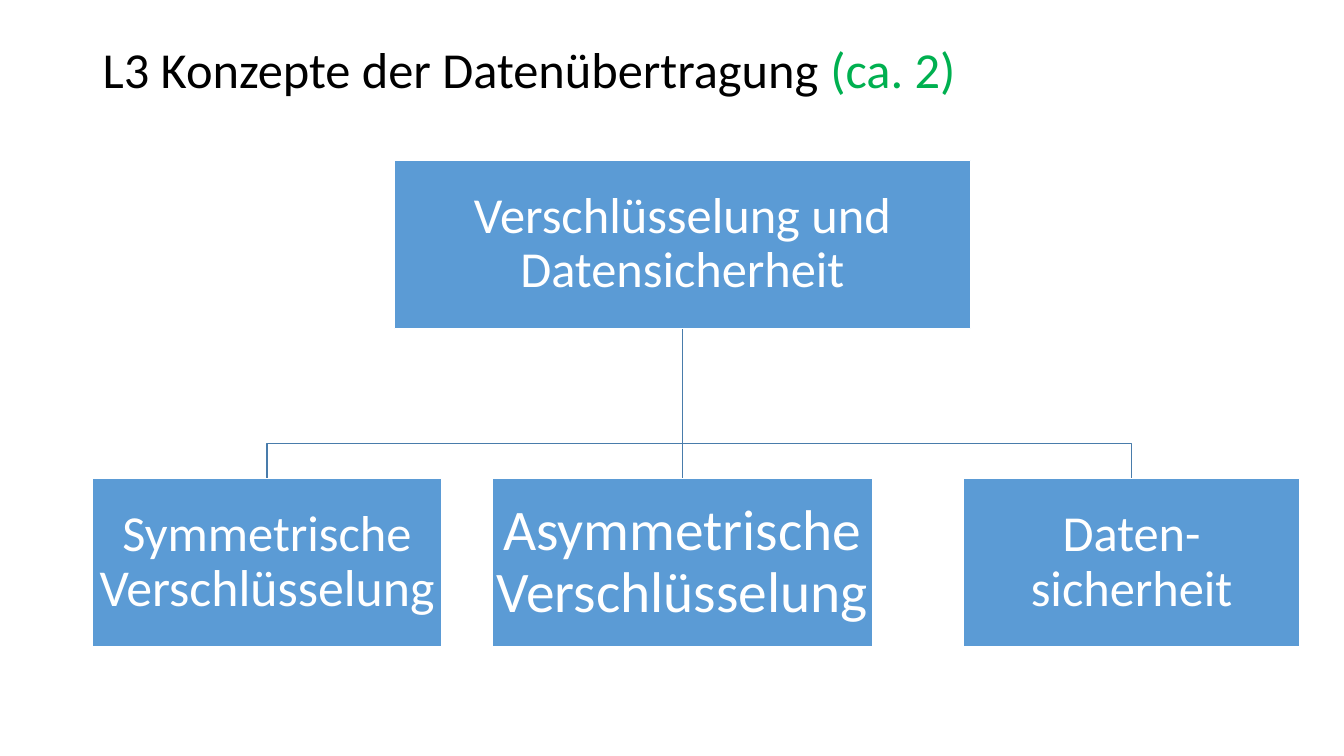
import dataclasses

import pptx
import pptx.dml.color
import pptx.enum.shapes
import pptx.enum.text
import pptx.presentation
import pptx.shapes.autoshape
import pptx.slide
import pptx.text.text
import pptx.util

SLIDE_WIDTH = pptx.util.Inches(13.33)
SLIDE_HEIGHT = pptx.util.Inches(7.5)
COLUMN = SLIDE_WIDTH / 100
ROW = SLIDE_HEIGHT / 100

FONT = "Calibri"
BLACK = pptx.dml.color.RGBColor(0x00, 0x00, 0x00)
WHITE = pptx.dml.color.RGBColor(0xFF, 0xFF, 0xFF)
GREEN = pptx.dml.color.RGBColor(0x00, 0xB0, 0x50)
BOX_BLUE = pptx.dml.color.RGBColor(0x5B, 0x9B, 0xD5)
BRANCH_BLUE = pptx.dml.color.RGBColor(0x49, 0x7C, 0xAB)

MARGIN = 6.9
BOX_ROWS = 22.27
TOPIC_ROW = 21.2
CONCEPT_ROW = 63.33
BRANCH_ROW = 58.67


@dataclasses.dataclass(frozen=True)
class Box:
    lines: tuple[str, ...]
    sizes: tuple[int, ...]
    column: float
    columns: float
    row: float

    @property
    def middle(self) -> float:
        return self.column + self.columns / 2


TOPIC = Box(("Verschlüsselung und Datensicherheit",), (36,), 29.33, 42.9, TOPIC_ROW)
CONCEPTS = (
    Box(("Symmetrische", "Verschlüsselung"), (36, 37), MARGIN, 25.95, CONCEPT_ROW),
    Box(("Asymmetrische", "Verschlüsselung"), (41, 41), 36.6, 28.35, CONCEPT_ROW),
    Box(("Daten-", "sicherheit"), (36, 36), 71.7, 25, CONCEPT_ROW),
)


def across(columns: float) -> int:
    return round(columns * COLUMN)


def down(rows: float) -> int:
    return round(rows * ROW)


def format_run(
    run: pptx.text.text._Run, size: int, color: pptx.dml.color.RGBColor
) -> None:
    run.font.name = FONT
    run.font.size = pptx.util.Pt(size)
    run.font.color.rgb = color


def draw_branch(slide: pptx.slide.Slide, topic: Box, concept: Box) -> None:
    builder = slide.shapes.build_freeform(
        across(topic.middle), down(topic.row + BOX_ROWS)
    )
    builder.add_line_segments(
        [
            (across(topic.middle), down(BRANCH_ROW)),
            (across(concept.middle), down(BRANCH_ROW)),
            (across(concept.middle), down(concept.row)),
        ],
        close=False,
    )
    branch = builder.convert_to_shape()
    branch.shadow.inherit = False
    branch.fill.background()
    branch.line.color.rgb = BRANCH_BLUE
    branch.line.width = pptx.util.Pt(1)


def draw_box(slide: pptx.slide.Slide, box: Box) -> None:
    panel = slide.shapes.add_shape(
        pptx.enum.shapes.MSO_SHAPE.RECTANGLE,
        across(box.column), down(box.row), across(box.columns), down(BOX_ROWS),
    )
    panel.shadow.inherit = False
    panel.fill.solid()
    panel.fill.fore_color.rgb = BOX_BLUE
    panel.line.color.rgb = WHITE
    panel.line.width = pptx.util.Pt(1)
    frame = panel.text_frame
    frame.word_wrap = True
    frame.vertical_anchor = pptx.enum.text.MSO_ANCHOR.MIDDLE
    frame.margin_left = frame.margin_right = pptx.util.Inches(0.02)
    frame.margin_top = frame.margin_bottom = pptx.util.Inches(0.03)
    label = frame.paragraphs[0]
    label.text = "\v".join(box.lines)
    label.alignment = pptx.enum.text.PP_ALIGN.CENTER
    label.line_spacing = 0.9
    for run, size in zip(label.runs, box.sizes):
        format_run(run, size, WHITE)


def draw_title(slide: pptx.slide.Slide) -> None:
    frame = slide.shapes.add_textbox(
        across(MARGIN), down(5.33), across(86.25), down(13.47)
    ).text_frame
    frame.word_wrap = True
    heading = frame.paragraphs[0]
    heading.text = "L3 Konzepte der Datenübertragung "
    heading.line_spacing = 0.9
    duration = heading.add_run()
    duration.text = "(ca. 2)"
    for run, color in zip(heading.runs, (BLACK, GREEN)):
        format_run(run, 36, color)


def main() -> None:
    presentation = pptx.Presentation()
    presentation.slide_width = SLIDE_WIDTH
    presentation.slide_height = SLIDE_HEIGHT
    slide = presentation.slides.add_slide(presentation.slide_layouts[6])
    for concept in reversed(CONCEPTS):
        draw_branch(slide, TOPIC, concept)
    for box in (TOPIC, *CONCEPTS):
        draw_box(slide, box)
    draw_title(slide)
    presentation.save("out.pptx")


if __name__ == "__main__":
    main()
